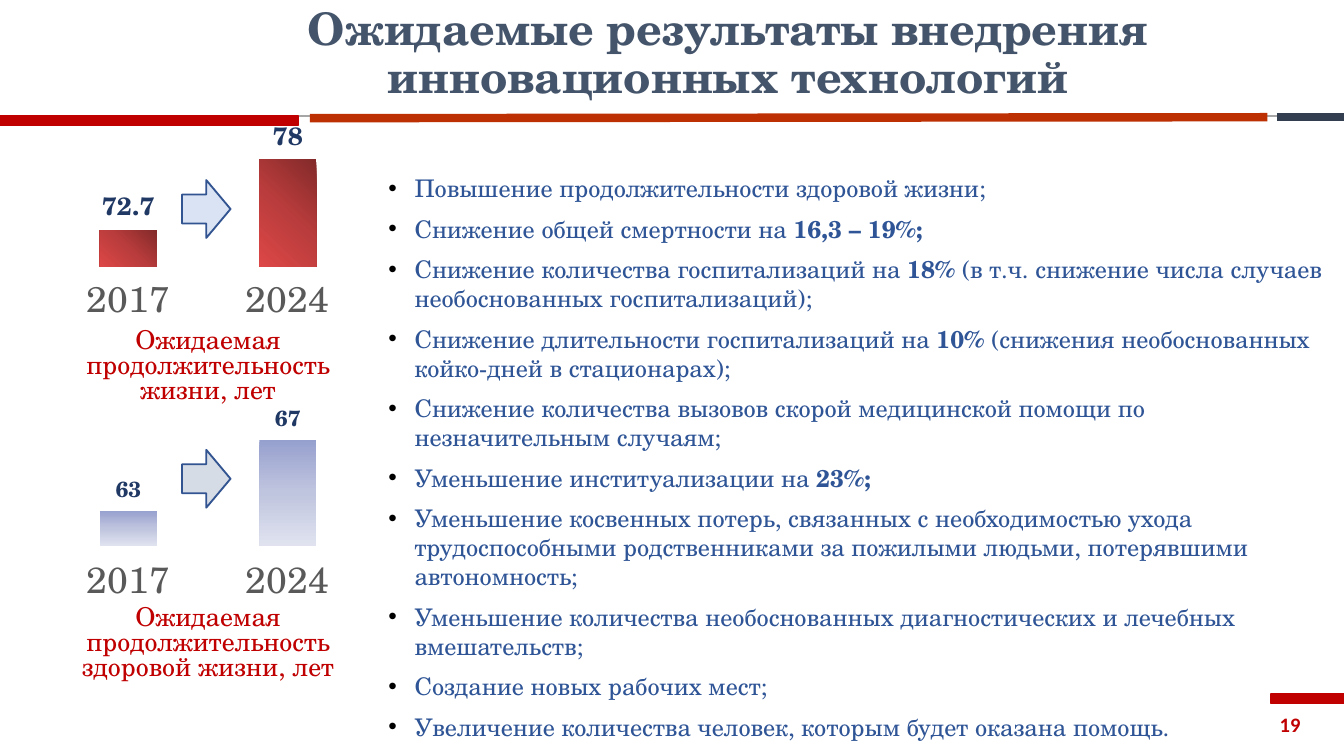
from lxml import etree
from pptx import Presentation
from pptx import util as u
from pptx.chart.data import CategoryChartData
from pptx.dml.color import RGBColor
from pptx.enum import chart as charts, shapes, text
from pptx.oxml import parse_xml
from pptx.oxml.ns import nsdecls, qn

Pt = u.Pt
SERIF = "TeX Gyre Schola"
WHITE = RGBColor(0xFF, 0xFF, 0xFF)
BLACK = RGBColor(0, 0, 0)
RED = RGBColor(0xC0, 0, 0)
ORANGE = RGBColor(0xBC, 0x30, 0x04)
SLATE = RGBColor(0x44, 0x54, 0x6A)
DARK_SLATE = RGBColor(0x33, 0x3F, 0x50)
GREY = RGBColor(0xA6, 0xA6, 0xA6)
AXIS_GREY = RGBColor(0x59, 0x59, 0x59)
NAVY = RGBColor(0x20, 0x38, 0x64)
BLUE = RGBColor(0x2F, 0x55, 0x97)
ARROW_EDGE = RGBColor(0x32, 0x54, 0x91)
PALE_BLUE = RGBColor(0xDA, 0xE3, 0xF3)
PALE_SLATE = RGBColor(0xD6, 0xDC, 0xE5)
RED_SHADES = [RGBColor(0x83, 0x2A, 0x2A), RGBColor(0xBA, 0x3C, 0x3C), RGBColor(0xDD, 0x47, 0x47)]
LILAC_SHADES = [RGBColor(0x96, 0xA0, 0xCE), RGBColor(0xC0, 0xC5, 0xDF), RGBColor(0xE0, 0xE3, 0xEF)]

RESULTS = [
    ["Повышение продолжительности здоровой жизни;"],
    ["Снижение общей смертности на ", "16,3 – 19%;"],
    ["Снижение количества госпитализаций на ", "18% ",
     "(в т.ч. снижение числа случаев необоснованных госпитализаций);"],
    ["Снижение длительности госпитализаций на ", "10% ",
     "(снижения необоснованных койко-дней в стационарах);"],
    ["Снижение количества вызовов скорой медицинской помощи по незначительным случаям;"],
    ["Уменьшение институализации на ", "23%;"],
    ["Уменьшение косвенных потерь, связанных с необходимостью ухода трудоспособными "
     "родственниками за пожилыми людьми, потерявшими автономность;"],
    ["Уменьшение количества необоснованных диагностических и лечебных вмешательств;"],
    ["Создание новых рабочих мест;"],
    ["Увеличение количества человек, которым будет оказана помощь."],
]


def style(font, size, color, bold=False, name=SERIF):
    font.name, font.size, font.bold = name, Pt(size), bold
    font.color.rgb = color


def add_block(slide, kind, box, fill, edge=None):
    block = slide.shapes.add_shape(kind, *map(Pt, box))
    block.shadow.inherit = False
    block.fill.solid()
    block.fill.fore_color.rgb = fill
    if edge is None:
        block.line.fill.background()
    else:
        block.line.color.rgb = edge
        block.line.width = Pt(1)
    return block


def add_rule(slide, start, end, color, width):
    rule = slide.shapes.add_connector(shapes.MSO_CONNECTOR.STRAIGHT, *map(Pt, start + end))
    rule.line.color.rgb = color
    rule.line.width = Pt(width)
    etree.SubElement(rule._element.spPr, qn("a:effectLst"))


def set_margins(frame, left, top, right, bottom):
    frame.margin_left, frame.margin_top = Pt(left), Pt(top)
    frame.margin_right, frame.margin_bottom = Pt(right), Pt(bottom)


def add_centered(frame, wording, size, color, spacing, bold=False):
    frame.word_wrap = True
    frame.text = wording
    line = frame.paragraphs[0]
    line.alignment = text.PP_ALIGN.CENTER
    line.line_spacing = spacing
    style(line.runs[0].font, size, color, bold)


def add_header(slide, box):
    left, top, width, height = box
    right, rule_y = left + width, top + height
    add_rule(slide, (left + 160, rule_y), (right, rule_y), GREY, 1)
    add_block(slide, shapes.MSO_SHAPE.RECTANGLE, (left, rule_y, 160, 5), RED, RED)
    title = add_block(slide, shapes.MSO_SHAPE.RECTANGLE, (left + 60, top + 8.5, width - 60, 42), WHITE)
    set_margins(title.text_frame, 0, 2, 0, 2)
    title.text_frame.vertical_anchor = text.MSO_ANCHOR.MIDDLE
    add_centered(title.text_frame, "Ожидаемые результаты внедрения инновационных технологий",
                 24, SLATE, 0.9, True)
    add_rule(slide, (right - 36, rule_y + 0.8), (right, rule_y + 0.8), DARK_SLATE, 4.5)
    add_rule(slide, (left + 166, rule_y + 1.3), (right - 41, rule_y + 0.8), ORANGE, 4.5)


def add_page_number(slide, box):
    left, top, width, height = box
    add_block(slide, shapes.MSO_SHAPE.RECTANGLE, (left, top, width, 5), RED, RED)
    number = slide.shapes.add_textbox(Pt(left), Pt(top + 9.5), Pt(width - 4), Pt(height - 9.5)).text_frame
    set_margins(number, 4.5, 0, 2, 0)
    number.word_wrap = False
    number.vertical_anchor = text.MSO_ANCHOR.MIDDLE
    number.text = "19"
    style(number.paragraphs[0].runs[0].font, 11, RED, True, "Calibri")


def add_results(slide, box):
    results = slide.shapes.add_textbox(*map(Pt, box)).text_frame
    results.word_wrap = True
    for i, parts in enumerate(RESULTS):
        item = results.add_paragraph() if i else results.paragraphs[0]
        props = item._p.get_or_add_pPr()
        props.set("marL", str(Pt(14)))
        props.set("indent", str(-Pt(14)))
        props.append(parse_xml(f'<a:buClr {nsdecls("a")}><a:srgbClr val="{BLACK}"/></a:buClr>'))
        props.append(parse_xml(f'<a:buFont {nsdecls("a")} typeface="Arial"/>'))
        props.append(parse_xml(f'<a:buChar {nsdecls("a")} char="•"/>'))
        if i:
            item.space_before = Pt(6)
        for j, part in enumerate(parts):
            run = item.add_run()
            run.text = part
            style(run.font, 13, BLUE, j == 1)


def fill_gradient(series, shades, angle):
    stops = "".join(f'<a:gs pos="{i * 50000}"><a:srgbClr val="{shade}"/></a:gs>'
                    for i, shade in enumerate(shades))
    props = series._element.get_or_add_spPr()
    props.insert(0, parse_xml(f'<a:gradFill {nsdecls("a")} rotWithShape="1"><a:gsLst>{stops}</a:gsLst>'
                              f'<a:lin ang="{angle * 60000}" scaled="0"/></a:gradFill>'))


def place_plot(chart, top, height):
    plot_area = chart._chartSpace.chart.plotArea
    for old in plot_area.findall(qn("c:layout")):
        plot_area.remove(old)
    sizes = "".join(f'<c:{key} val="{value}"/>'
                    for key, value in zip("xywh", (0.02, top, 0.96, height)))
    plot_area.insert(0, parse_xml(
        f'<c:layout {nsdecls("c")}><c:manualLayout><c:layoutTarget val="inner"/>'
        f'<c:xMode val="edge"/><c:yMode val="edge"/>{sizes}</c:manualLayout></c:layout>'))


def add_indicator(slide, box, caption, values, scale, plot_span, shades, angle,
                  label_size, arrow_top, arrow_fill):
    left, top, width, height = box
    caption_box = (left, top + height - 46, width, 46)
    frame = slide.shapes.add_textbox(*map(Pt, caption_box)).text_frame
    set_margins(frame, 5, 3, 5, 3)
    add_centered(frame, caption, 13.9, RED, 0.8)

    data = CategoryChartData()
    data.categories = ["2017", "2024"]
    data.add_series("Series 1", values)
    chart = slide.shapes.add_chart(charts.XL_CHART_TYPE.COLUMN_CLUSTERED,
                                   *map(Pt, (left, top, width, 112)), data).chart
    chart.has_legend = chart.has_title = False
    style(chart.font, 10, BLACK)
    years, level = chart.category_axis, chart.value_axis
    years.major_tick_mark = charts.XL_TICK_MARK.NONE
    years.format.line.fill.background()
    style(years.tick_labels.font, 20, AXIS_GREY)
    level.visible = level.has_major_gridlines = False
    level.minimum_scale, level.maximum_scale = scale
    plot = chart.plots[0]
    plot.gap_width = 180
    plot.vary_by_categories = False
    fill_gradient(plot.series[0], shades, angle)
    labels = plot.series[0].data_labels
    labels.show_value = True
    labels.position = charts.XL_LABEL_POSITION.OUTSIDE_END
    style(labels.font, label_size, NAVY, True)
    place_plot(chart, *plot_span)
    add_block(slide, shapes.MSO_SHAPE.RIGHT_ARROW, (left + 75, top + arrow_top, 26, 31),
              arrow_fill, ARROW_EDGE)


def main():
    deck = Presentation()
    deck.slide_width, deck.slide_height = Pt(720), Pt(405)
    slide = deck.slides.add_slide(deck.slide_layouts[6])
    add_header(slide, (0, 0, 720, 62))
    add_page_number(slide, (681, 372, 39, 22.5))
    add_results(slide, (201, 89.5, 518, 290))
    add_indicator(slide, (22.5, 62, 178, 157.5), "Ожидаемая продолжительность жизни, лет",
                  (72.7, 78), (70, 80), (0.06, 0.67), RED_SHADES, 135, 14, 34.5, PALE_BLUE)
    add_indicator(slide, (22.5, 214.5, 178, 153.5), "Ожидаемая продолжительность здоровой жизни, лет",
                  (63, 67), (61, 68), (0.08, 0.61), LILAC_SHADES, 90, 12, 26.5, PALE_SLATE)
    deck.save("out.pptx")


if __name__ == "__main__":
    main()
